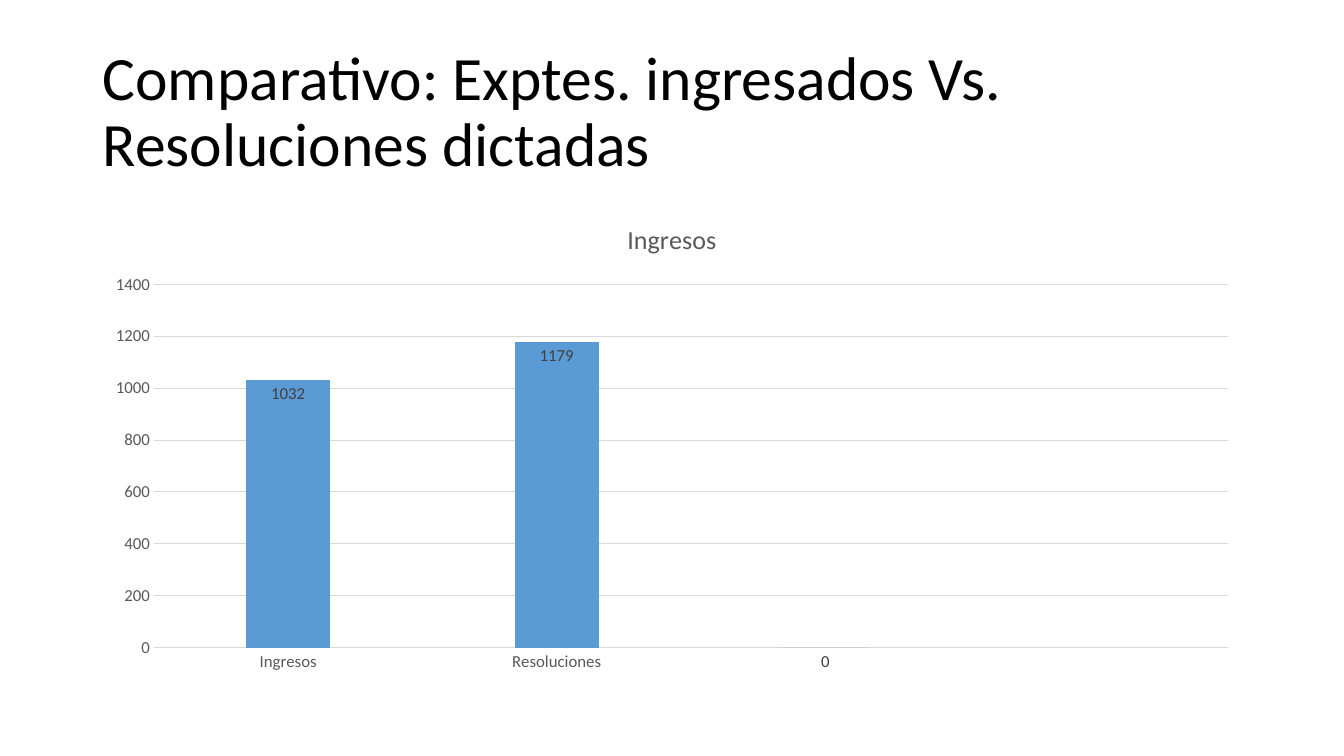
from pptx import Presentation
from pptx.chart.data import CategoryChartData
from pptx.dml.color import RGBColor
from pptx.enum.chart import XL_CHART_TYPE, XL_LABEL_POSITION, XL_TICK_MARK
from pptx.enum.text import MSO_ANCHOR
from pptx.util import Inches, Pt

BLACK = RGBColor(0x00, 0x00, 0x00)
DARK = RGBColor(0x40, 0x40, 0x40)
GRAY = RGBColor(0x59, 0x59, 0x59)
PALE = RGBColor(0xD9, 0xD9, 0xD9)
BLUE = RGBColor(0x5B, 0x9B, 0xD5)


def style(font, size, color):
    font.name = "Calibri"
    font.size = Pt(size)
    font.bold = False
    font.color.rgb = color


def rule(line):
    line.color.rgb = PALE
    line.width = Pt(0.75)


deck = Presentation()
deck.slide_width = Inches(13.33)
deck.slide_height = Inches(7.5)
slide = deck.slides.add_slide(deck.slide_layouts[6])

left = Inches(0.92)
width = deck.slide_width - 2 * left

box = slide.shapes.add_textbox(left, Inches(0.4), width, Inches(1.45))
frame = box.text_frame
frame.word_wrap = True
frame.vertical_anchor = MSO_ANCHOR.MIDDLE
para = frame.paragraphs[0]
para.line_spacing = 0.9
run = para.add_run()
run.text = "Comparativo: Exptes. ingresados Vs. Resoluciones dictadas"
style(run.font, 44, BLACK)

data = CategoryChartData()
data.categories = ["Ingresos", "Resoluciones", "", ""]
data.add_series("Ingresos", [1032, 1179, 0, None])
chart = slide.shapes.add_chart(
    XL_CHART_TYPE.COLUMN_CLUSTERED, left, Inches(2), width, Inches(4.76), data
).chart
style(chart.font, 10, BLACK)
chart.has_legend = False

chart.has_title = True
run = chart.chart_title.text_frame.paragraphs[0].add_run()
run.text = "Ingresos"
style(run.font, 18.6, GRAY)
chart.chart_title.include_in_layout = False

for axis in (chart.category_axis, chart.value_axis):
    axis.major_tick_mark = XL_TICK_MARK.NONE
    axis.minor_tick_mark = XL_TICK_MARK.NONE
    style(axis.tick_labels.font, 12, GRAY)
rule(chart.category_axis.format.line)
chart.value_axis.format.line.fill.background()
rule(chart.value_axis.major_gridlines.format.line)
chart.value_axis.minimum_scale = 0
chart.value_axis.maximum_scale = 1400
chart.value_axis.major_unit = 200

plot = chart.plots[0]
plot.vary_by_categories = False
plot.gap_width = 219
plot.overlap = -27
bars = plot.series[0]
bars.format.fill.solid()
bars.format.fill.fore_color.rgb = BLUE
tags = bars.data_labels
tags.show_value = True
tags.position = XL_LABEL_POSITION.INSIDE_END
style(tags.font, 12, DARK)

deck.save("out.pptx")
